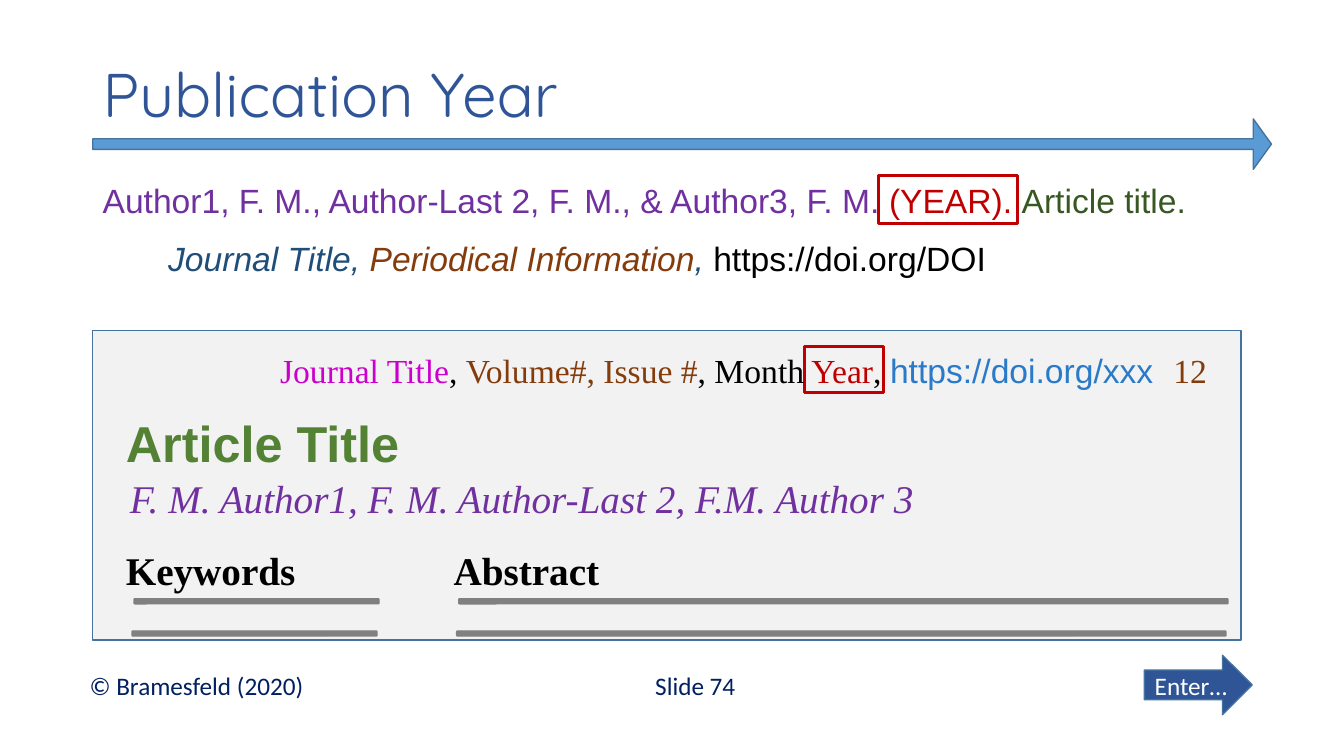
from pptx import Presentation
from pptx.dml.color import RGBColor
from pptx.enum.shapes import MSO_SHAPE
from pptx.enum.text import MSO_ANCHOR, MSO_AUTO_SIZE, PP_ALIGN
from pptx.util import Inches, Pt

SERIF = "Times New Roman"
SANS = "Arial"
FOOTER = "Calibri"
BLACK = "000000"
PURPLE = "7030A0"
RED = "C00000"
BROWN = "843C0C"
NAVY = "002060"
BLUE = "2F5597"
EDGE = "43739E"
GREY = "808080"


def rgb(value):
    return RGBColor.from_string(value)


class SlideBuilder:
    def __init__(self, prs):
        self.s = prs.slides.add_slide(prs.slide_layouts[6])

    def shape(self, kind, box, fill=None, line=EDGE, weight=1):
        sp = self.s.shapes.add_shape(kind, *map(Inches, box))
        sp.shadow.inherit = False
        if fill:
            sp.fill.solid()
            sp.fill.fore_color.rgb = rgb(fill)
        else:
            sp.fill.background()
        sp.line.color.rgb = rgb(line)
        sp.line.width = Pt(weight)
        return sp

    def font(self, p, size, name, color=None, bold=False, italic=False):
        p.font.size = Pt(size)
        p.font.name = name
        p.font.bold = bold
        p.font.italic = italic
        if color:
            p.font.color.rgb = rgb(color)

    def runs(self, p, parts):
        for text, color, *style in parts:
            r = p.add_run()
            r.text = text
            r.font.color.rgb = rgb(color)
            for key, value in (style[0] if style else {}).items():
                setattr(r.font, key, value)

    def frame(self, box, wrap=True):
        tf = self.s.shapes.add_textbox(*map(Inches, box)).text_frame
        tf.word_wrap = wrap
        tf.auto_size = MSO_AUTO_SIZE.SHAPE_TO_FIT_TEXT
        return tf

    def label(self, text, box, size, name, color, wrap=False, **style):
        tf = self.frame(box, wrap)
        p = tf.paragraphs[0]
        p.text = text
        self.font(p, size, name, color, **style)
        return tf

    def title(self, text, box):
        tf = self.label(text, box, 44, "Quicksand", BLUE, wrap=True)
        tf.auto_size = MSO_AUTO_SIZE.NONE
        tf.vertical_anchor = MSO_ANCHOR.MIDDLE
        tf.paragraphs[0].line_spacing = 0.9

    def button(self, text, box):
        tf = self.shape(MSO_SHAPE.RIGHT_ARROW, box, BLUE).text_frame
        tf.vertical_anchor = MSO_ANCHOR.MIDDLE
        p = tf.paragraphs[0]
        p.text = text
        p.alignment = PP_ALIGN.CENTER
        self.font(p, 18, FOOTER, "FFFFFF")

    def highlight(self, box):
        self.shape(MSO_SHAPE.RECTANGLE, box, line=RED, weight=2.25)

    def column(self, heading, left, width, bar_left, bar_width):
        self.label(heading, (left, 5.37, width, 0.57), 28, SERIF, BLACK, bold=True)
        for shift, top in ((0.02, 5.94), (0, 6.26)):
            box = (bar_left + shift, top, bar_width, 0.05)
            self.shape(MSO_SHAPE.ROUNDED_RECTANGLE, box, GREY, GREY)


def main():
    prs = Presentation()
    prs.slide_width, prs.slide_height = Inches(13.33), Inches(7.5)
    b = SlideBuilder(prs)

    b.button("Enter…", (11.35, 6.5, 1.07, 0.59))
    b.label("Slide 74", (6.4, 6.6, 1.05, 0.4), 18, FOOTER, NAVY)
    b.label("© Bramesfeld (2020)", (0.79, 6.6, 2.71, 0.4), 18, FOOTER, NAVY, wrap=True)

    sp = b.shape(MSO_SHAPE.RIGHT_ARROW, (0.92, 1.18, 11.69, 0.5), "5B9BD5")
    sp.adjustments[0], sp.adjustments[1] = 0.21, 0.36
    b.shape(MSO_SHAPE.RECTANGLE, (0.92, 3.28, 11.39, 3.07), "F2F2F2")
    b.title("Publication Year", (0.92, 0.4, 11.5, 1.14))

    b.label("F. M. Author1, F. M. Author-Last 2, F.M. Author 3",
            (1.19, 4.66, 8.06, 0.57), 28, SERIF, PURPLE, italic=True)
    b.label("Article Title", (1.15, 4.04, 2.94, 0.71), 36, SANS, "548235", bold=True)
    b.column("Abstract", 4.4, 1.66, 4.53, 7.63)
    b.column("Keywords", 1.15, 1.9, 1.31, 2.43)
    b.label("12", (11.54, 3.42, 0.56, 0.5), 24, SERIF, BROWN, wrap=True)

    tf = b.frame((0.92, 1.74, 11.2, 1.08))
    p = tf.paragraphs[0]
    b.font(p, 24, SANS)
    b.runs(p, [
        ("Author1, F. M., Author-Last 2, F. M., & Author3, F. M. ", PURPLE),
        ("(YEAR). ", RED),
        ("Article title.", "385723"),
    ])
    p = tf.add_paragraph()
    p.space_before = Pt(12)
    p._p.get_or_add_pPr().set("indent", str(Inches(0.65)))
    b.font(p, 24, SANS)
    italic = {"italic": True}
    b.runs(p, [
        ("Journal Title, ", "1F4E79", italic),
        ("Periodical Information", BROWN, italic),
        (", ", "1F4E79", italic),
        ("https://doi.org/DOI", BLACK),
    ])

    b.highlight((8.71, 1.74, 1.38, 0.48))
    b.highlight((7.98, 3.44, 0.78, 0.45))

    p = b.frame((2.68, 3.42, 8.87, 0.5)).paragraphs[0]
    b.font(p, 24, SERIF)
    b.runs(p, [
        ("Journal Title", "CC00CC"),
        (", ", BLACK),
        ("Volume#, Issue #", BROWN),
        (", Month", BLACK),
        (" Year", RED),
        (", ", BLACK),
        ("https://doi.org/xxx", "2A7ACA", {"name": SANS}),
    ])

    prs.save("out.pptx")


if __name__ == "__main__":
    main()
